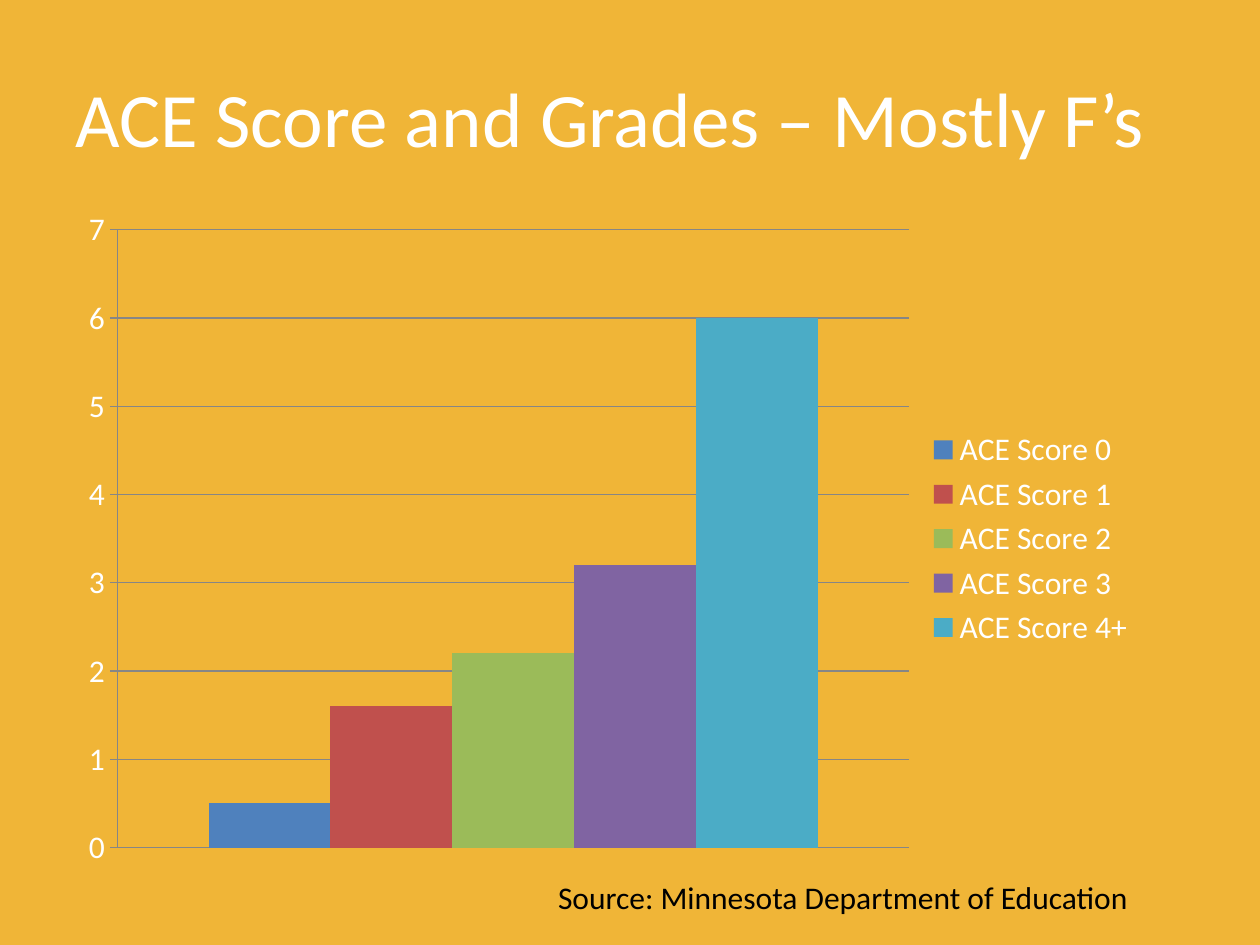
from pptx import Presentation
from pptx.chart.data import CategoryChartData
from pptx.dml.color import RGBColor
from pptx.enum.chart import XL_CHART_TYPE as ChartType, XL_LEGEND_POSITION as LegendPosition
from pptx.enum.chart import XL_TICK_MARK as TickMark
from pptx.enum.text import MSO_ANCHOR as Anchor, PP_ALIGN as Align
from pptx.oxml import parse_xml
from pptx.oxml.ns import nsdecls, qn
from pptx.util import Cm, Pt

TITLE = "ACE Score and Grades – Mostly F’s"
SOURCE = "Source: Minnesota Department of Education"
SCORES = [
    ("ACE Score 0", 0.5, "4F81BD"),
    ("ACE Score 1", 1.6, "C0504D"),
    ("ACE Score 2", 2.2, "9BBB59"),
    ("ACE Score 3", 3.2, "8064A2"),
    ("ACE Score 4+", 6, "4BACC6"),
]
FONT = "Calibri"
BACKGROUND, WHITE, BLACK, GREY = "F0B537", "FFFFFF", "000000", "868686"
PLOT_AREA = {"x": 0.05, "y": 0.05, "w": 0.73, "h": 0.9}  # fractions of the chart


def color(hex_value):
    return RGBColor.from_string(hex_value)


def format_font(font, size, hex_value):
    font.name, font.size = FONT, Pt(size)
    font.color.rgb = color(hex_value)


def place(shape, left, top, width, height):
    shape.left, shape.top = Cm(left), Cm(top)
    shape.width, shape.height = Cm(width), Cm(height)


def write(shape, text, *, size, hex_value, anchor=Anchor.TOP, wrap=True):
    frame = shape.text_frame
    frame.word_wrap, frame.vertical_anchor = wrap, anchor
    paragraph = frame.paragraphs[0]
    paragraph.alignment = Align.LEFT
    run = paragraph.add_run()
    run.text = text
    format_font(run.font, size, hex_value)


def fix_plot_area(chart):
    """Give the inner plot area a fixed place within the chart."""
    plot_area = chart._chartSpace.chart.plotArea
    for layout in plot_area.findall(qn("c:layout")):
        plot_area.remove(layout)
    sizes = "".join(f'<c:{key} val="{value}"/>' for key, value in PLOT_AREA.items())
    plot_area.insert(0, parse_xml(
        f'<c:layout {nsdecls("c")}><c:manualLayout><c:layoutTarget val="inner"/>'
        f'<c:xMode val="edge"/><c:yMode val="edge"/>{sizes}</c:manualLayout></c:layout>'))


def add_score_chart(slide):
    data = CategoryChartData()
    data.categories = ["1"]
    for name, value, _ in SCORES:
        data.add_series(name, [value])
    chart = slide.shapes.add_chart(ChartType.COLUMN_CLUSTERED, Cm(1.27), Cm(3.94),
                                   Cm(21.87), Cm(13.84), data).chart
    chart.has_title = False
    format_font(chart.font, 18, WHITE)
    chart.has_legend = True
    chart.legend.position = LegendPosition.RIGHT
    chart.legend.include_in_layout = False

    plot = chart.plots[0]
    plot.gap_width, plot.overlap, plot.vary_by_categories = 150, 0, False
    for series, (_, _, hex_value) in zip(plot.series, SCORES):
        series.format.fill.solid()
        series.format.fill.fore_color.rgb = color(hex_value)

    chart.category_axis.visible = False
    axis = chart.value_axis
    axis.minimum_scale, axis.maximum_scale, axis.major_unit = 0, 7, 1
    axis.major_tick_mark = TickMark.OUTSIDE
    axis.has_major_gridlines = True
    for line in (axis.format.line, axis.major_gridlines.format.line):
        line.color.rgb = color(GREY)
        line.width = Pt(0.75)
    fix_plot_area(chart)


def main():
    presentation = Presentation()
    presentation.slide_width, presentation.slide_height = Cm(25.4), Cm(19.05)
    slide = presentation.slides.add_slide(presentation.slide_layouts[5])
    slide.background.fill.solid()
    slide.background.fill.fore_color.rgb = color(BACKGROUND)

    title = slide.shapes.title
    place(title, 1.27, 0.76, 22.86, 3.18)
    write(title, TITLE, size=44, hex_value=WHITE, anchor=Anchor.MIDDLE)

    add_score_chart(slide)

    source = slide.shapes.add_textbox(Cm(11), Cm(17.58), Cm(12.14), Cm(1.02))
    write(source, SOURCE, size=18, hex_value=BLACK, wrap=False)
    presentation.save("out.pptx")


if __name__ == "__main__":
    main()
